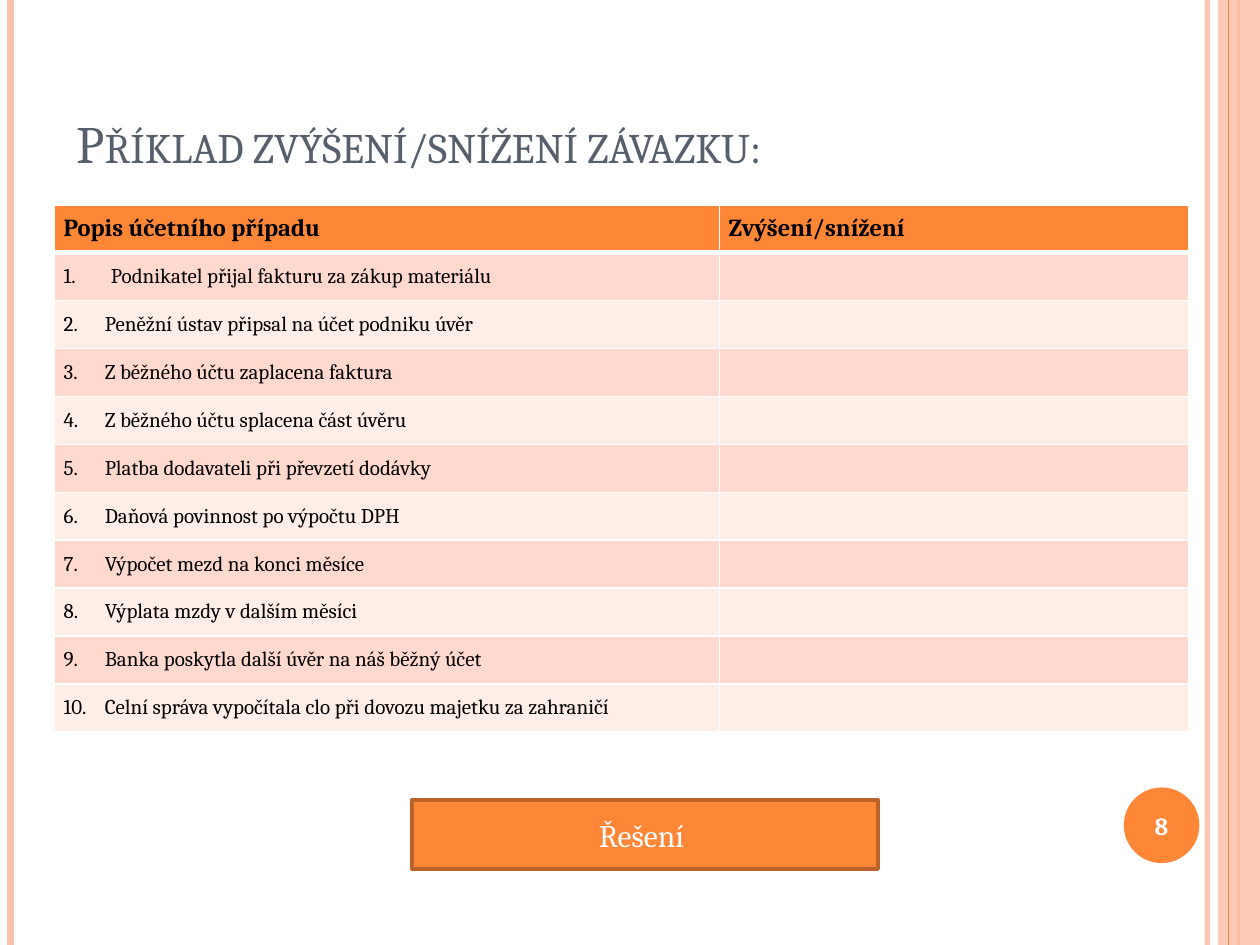
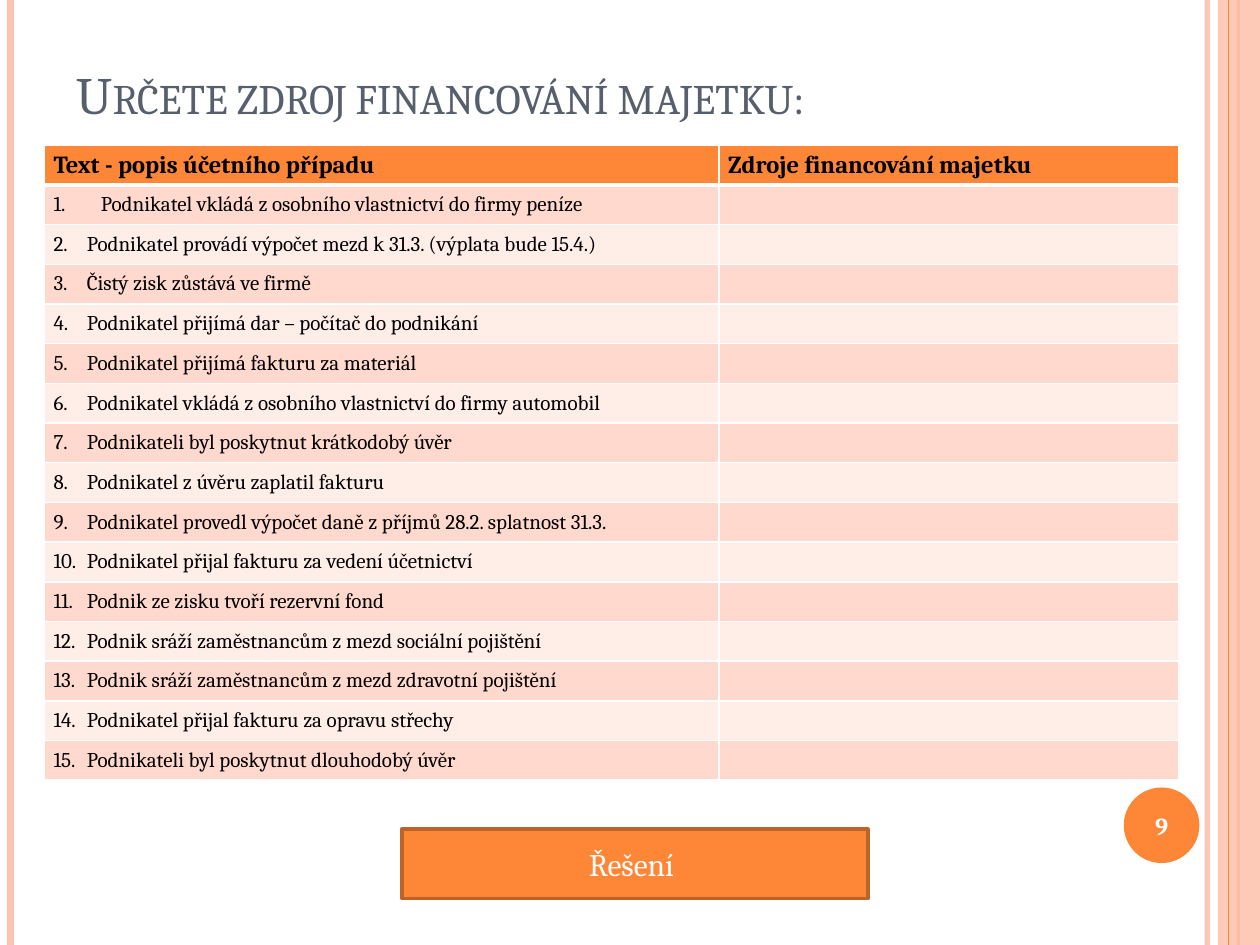
from dataclasses import dataclass

from lxml.etree import SubElement
from pptx import Presentation
from pptx.dml.color import RGBColor
from pptx.enum.shapes import MSO_CONNECTOR, MSO_SHAPE
from pptx.enum.text import MSO_ANCHOR, PP_ALIGN
from pptx.oxml.ns import qn
from pptx.shapes.autoshape import Shape
from pptx.slide import Slide
from pptx.table import _Cell
from pptx.text.text import TextFrame
from pptx.util import Pt


# Theme
@dataclass(frozen=True)
class Theme:
    font: str = "Cambria"
    orange: str = "FE8637"
    dark_orange: str = "BC6329"
    peach: str = "FEC3AE"
    slate: str = "575F6D"
    white: str = "FFFFFF"
    black: str = "000000"
    bands: tuple[str, str] = ("FFD9CE", "FFEDE8")
    title_size: float = 30
    button_size: float = 18
    header_size: float = 14
    body_size: float = 12


THEME = Theme()
SLIDE_WIDTH, SLIDE_HEIGHT = 720, 540
TABLE_WIDTH = 648
FIRST_INDENT = 27


# What the slides are made of
@dataclass(frozen=True)
class Stripe:
    x: float
    color: str
    width: float
    opacity: int = 100


@dataclass(frozen=True)
class Box:
    left: float
    top: float
    width: float
    height: float

    def lengths(self) -> tuple[Pt, Pt, Pt, Pt]:
        return Pt(self.left), Pt(self.top), Pt(self.width), Pt(self.height)


@dataclass(frozen=True)
class Exercise:
    number: int
    title: str
    title_top: float
    table_left: float
    table_top: float
    first_column_width: float
    header_height: float
    row_height: float
    item_indent: float
    headers: tuple[str, str]
    items: tuple[str, ...]
    button_left: float
    button_top: float


STRIPES_BEHIND_BAND = (
    Stripe(689.9, THEME.peach, 3, 93),
    Stripe(6, THEME.peach, 4.5),
    Stripe(707.8, THEME.orange, 1.5),
)
SIDE_BAND = Box(696, 0, 24, SLIDE_HEIGHT)
STRIPE_ON_BAND = Stripe(702, THEME.orange, 0.75)
NUMBER_CIRCLE = Box(642.2, 450, 43.2, 43.2)

EXERCISES = (
    Exercise(
        number=8,
        title="Příklad zvýšení/snížení závazku:",
        title_top=43.2,
        table_left=31.2,
        table_top=117,
        first_column_width=380,
        header_height=27.4,
        row_height=27.4,
        item_indent=23.5,
        headers=("Popis účetního případu", "Zvýšení/snížení"),
        items=(
            "Podnikatel přijal fakturu za zákup materiálu",
            "Peněžní ústav připsal na účet podniku úvěr",
            "Z běžného účtu zaplacena faktura",
            "Z běžného účtu splacena část úvěru",
            "Platba dodavateli při převzetí dodávky",
            "Daňová povinnost po výpočtu DPH",
            "Výpočet mezd na konci měsíce",
            "Výplata mzdy v dalším měsíci",
            "Banka poskytla další úvěr na náš běžný účet",
            "Celní správa vypočítala clo při dovozu majetku za zahraničí",
        ),
        button_left=235.4,
        button_top=457,
    ),
    Exercise(
        number=9,
        title="Určete zdroj financování majetku:",
        title_top=15.1,
        table_left=25.4,
        table_top=83,
        first_column_width=385.5,
        header_height=22.7,
        row_height=22.7,
        item_indent=19,
        headers=("Text - popis účetního případu", "Zdroje financování majetku"),
        items=(
            "Podnikatel vkládá z osobního vlastnictví do firmy peníze",
            "Podnikatel provádí výpočet mezd k 31.3. (výplata bude 15.4.)",
            "Čistý zisk zůstává ve firmě",
            "Podnikatel přijímá dar – počítač do podnikání",
            "Podnikatel přijímá fakturu za materiál",
            "Podnikatel vkládá z osobního vlastnictví do firmy automobil",
            "Podnikateli byl poskytnut krátkodobý úvěr",
            "Podnikatel z úvěru zaplatil fakturu",
            "Podnikatel provedl výpočet daně z příjmů 28.2. splatnost 31.3.",
            "Podnikatel přijal fakturu za vedení účetnictví",
            "Podnik ze zisku tvoří rezervní fond",
            "Podnik sráží zaměstnancům z mezd sociální pojištění",
            "Podnik sráží zaměstnancům z mezd zdravotní pojištění",
            "Podnikatel přijal fakturu za opravu střechy",
            "Podnikateli byl poskytnut dlouhodobý úvěr",
        ),
        button_left=229.6,
        button_top=473.8,
    ),
)


# Helpers
def rgb(color: str) -> RGBColor:
    return RGBColor.from_string(color)


def set_text(frame: TextFrame, text: str, size: float, color: str, bold: bool = False) -> None:
    frame.text = text
    for run in frame.paragraphs[0].runs:
        run.font.name = THEME.font
        run.font.size = Pt(size)
        run.font.bold = bold
        run.font.color.rgb = rgb(color)


def set_opacity(shape, percent: int) -> None:
    for color in shape._element.spPr.iter(qn("a:srgbClr")):
        SubElement(color, qn("a:alpha"), val=str(percent * 1000))


def add_box(slide: Slide, kind: MSO_SHAPE, box: Box, fill: str) -> Shape:
    shape = slide.shapes.add_shape(kind, *box.lengths())
    shape.shadow.inherit = False
    shape.fill.solid()
    shape.fill.fore_color.rgb = rgb(fill)
    shape.line.fill.background()
    return shape


def set_centered_text(shape: Shape, text: str, size: float, bold: bool = False) -> None:
    frame = shape.text_frame
    set_text(frame, text, size, THEME.white, bold)
    frame.vertical_anchor = MSO_ANCHOR.MIDDLE
    frame.paragraphs[0].alignment = PP_ALIGN.CENTER


# Shared frame
def add_stripe(slide: Slide, stripe: Stripe) -> None:
    connector = slide.shapes.add_connector(
        MSO_CONNECTOR.STRAIGHT, Pt(stripe.x), Pt(0), Pt(stripe.x), Pt(SLIDE_HEIGHT)
    )
    connector.line.color.rgb = rgb(stripe.color)
    connector.line.width = Pt(stripe.width)
    if stripe.opacity < 100:
        set_opacity(connector, stripe.opacity)
    SubElement(connector._element.spPr, qn("a:effectLst"))


def add_frame(slide: Slide, number: int) -> None:
    for stripe in STRIPES_BEHIND_BAND:
        add_stripe(slide, stripe)
    band = add_box(slide, MSO_SHAPE.RECTANGLE, SIDE_BAND, THEME.peach)
    set_opacity(band, 87)
    add_stripe(slide, STRIPE_ON_BAND)
    circle = add_box(slide, MSO_SHAPE.OVAL, NUMBER_CIRCLE, THEME.orange)
    set_centered_text(circle, str(number), THEME.header_size, bold=True)


def add_title(slide: Slide, text: str, top: float) -> None:
    frame = slide.shapes.add_textbox(*Box(36.7, top, 602, 59.8).lengths()).text_frame
    frame.word_wrap = True
    frame.vertical_anchor = MSO_ANCHOR.BOTTOM
    set_text(frame, text, THEME.title_size, THEME.slate)
    frame.paragraphs[0].runs[0].font._element.set("cap", "small")


# Table
def style_cell(cell: _Cell, fill: str, top_border: float, bottom_border: float) -> None:
    cell.margin_left = cell.margin_right = Pt(5.2)
    cell.margin_top = cell.margin_bottom = 0
    cell.vertical_anchor = MSO_ANCHOR.MIDDLE
    properties = cell._tc.get_or_add_tcPr()
    for side, width in (("L", 1), ("R", 1), ("T", top_border), ("B", bottom_border)):
        border = SubElement(properties, qn(f"a:ln{side}"), w=str(Pt(width)))
        SubElement(SubElement(border, qn("a:solidFill")), qn("a:srgbClr"), val=THEME.white)
    cell.fill.solid()
    cell.fill.fore_color.rgb = rgb(fill)


def number_item(cell: _Cell, number: int, indent: float) -> None:
    properties = cell.text_frame.paragraphs[0]._p.get_or_add_pPr()
    properties.set("marL", str(Pt(indent)))
    properties.set("indent", str(-Pt(indent)))
    SubElement(properties, qn("a:buFont"), typeface=THEME.font)
    SubElement(properties, qn("a:buAutoNum"), type="arabicPeriod", startAt=str(number))


def add_exercise_table(slide: Slide, exercise: Exercise) -> None:
    row_count = len(exercise.items) + 1
    height = exercise.header_height + exercise.row_height * len(exercise.items)
    box = Box(exercise.table_left, exercise.table_top, TABLE_WIDTH, height)
    table = slide.shapes.add_table(row_count, 2, *box.lengths()).table
    table.columns[0].width = Pt(exercise.first_column_width)
    table.columns[1].width = Pt(TABLE_WIDTH - exercise.first_column_width)

    table.rows[0].height = Pt(exercise.header_height)
    for cell, header in zip(table.rows[0].cells, exercise.headers):
        style_cell(cell, THEME.orange, 1, 3)
        set_text(cell.text_frame, header, THEME.header_size, THEME.black, bold=True)

    for number, item in enumerate(exercise.items, start=1):
        row = table.rows[number]
        row.height = Pt(exercise.row_height)
        item_cell, answer_cell = row.cells
        for cell in (item_cell, answer_cell):
            style_cell(cell, THEME.bands[(number - 1) % 2], 3 if number == 1 else 1, 1)
        set_text(item_cell.text_frame, item, THEME.body_size, THEME.black)
        number_item(item_cell, number, FIRST_INDENT if number == 1 else exercise.item_indent)
        # An empty cell needs a small type size to keep its row low
        answer = answer_cell.text_frame.paragraphs[0]._p
        SubElement(answer, qn("a:endParaRPr"), sz=str(int(THEME.body_size * 100)))


# Button
def add_button(slide: Slide, left: float, top: float) -> None:
    button = add_box(slide, MSO_SHAPE.RECTANGLE, Box(left, top, 266.4, 39.6), THEME.orange)
    button.line.color.rgb = rgb(THEME.dark_orange)
    button.line.width = Pt(2)
    set_centered_text(button, "Řešení ", THEME.button_size)


def main() -> None:
    presentation = Presentation()
    presentation.slide_width = Pt(SLIDE_WIDTH)
    presentation.slide_height = Pt(SLIDE_HEIGHT)
    for exercise in EXERCISES:
        slide = presentation.slides.add_slide(presentation.slide_layouts[6])
        add_frame(slide, exercise.number)
        add_title(slide, exercise.title, exercise.title_top)
        add_exercise_table(slide, exercise)
        add_button(slide, exercise.button_left, exercise.button_top)
    presentation.save("out.pptx")


if __name__ == "__main__":
    main()
